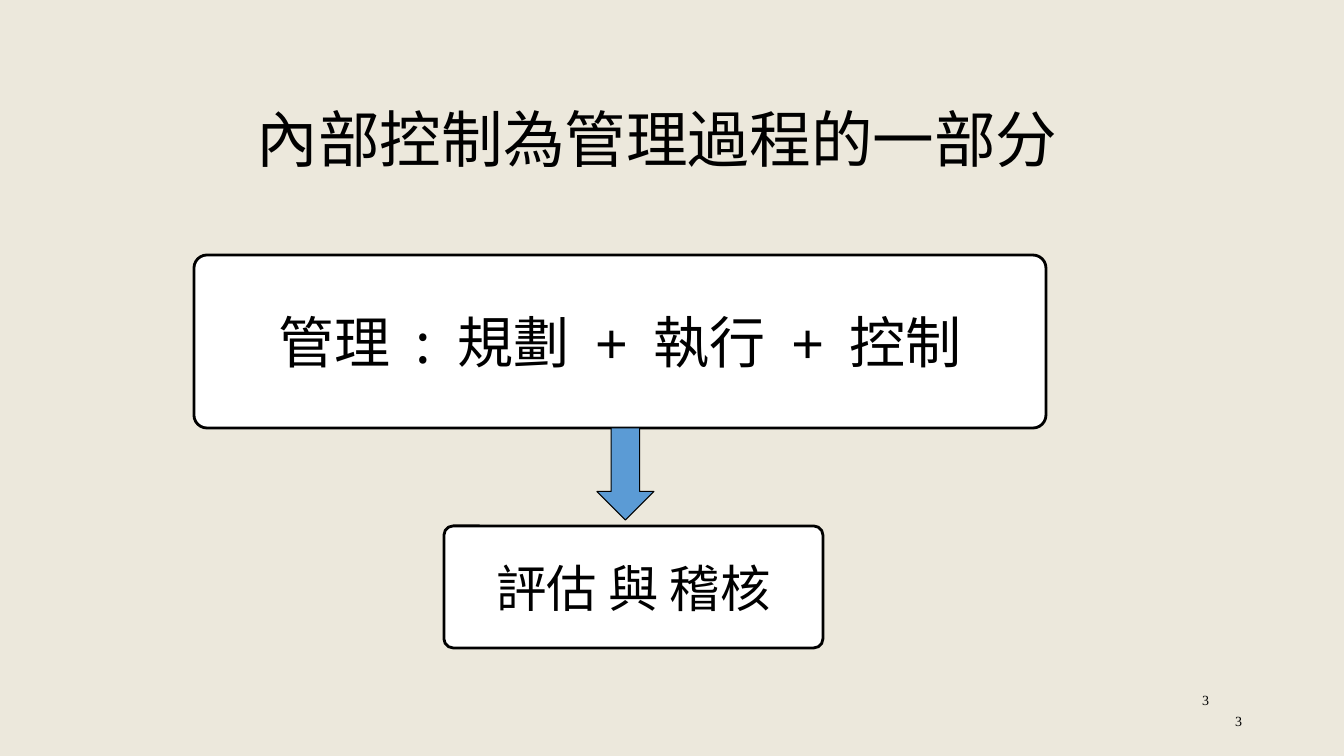
"""Build a slide on internal control as part of the management process."""
from lxml import etree
from pptx import Presentation
from pptx.dml.color import RGBColor
from pptx.enum.shapes import MSO_SHAPE
from pptx.enum.text import MSO_ANCHOR, PP_ALIGN
from pptx.oxml.ns import qn
from pptx.util import Emu, Pt

CENTER, RIGHT = PP_ALIGN.CENTER, PP_ALIGN.RIGHT
TOP, MIDDLE, BOTTOM = MSO_ANCHOR.TOP, MSO_ANCHOR.MIDDLE, MSO_ANCHOR.BOTTOM
ROUNDED, DOWN_ARROW = MSO_SHAPE.ROUNDED_RECTANGLE, MSO_SHAPE.DOWN_ARROW

COLORS = {"background": "ECE8DC", "box": "FFFFFF", "arrow": "5B9BD5", "ink": "000000"}
SERIF, SANS, CJK = "Times New Roman", "Arial", "Noto Sans CJK SC"
EMU_PER_PX = 914400 / 100.8
GAP_SPACING = 950

LABELS = [
    ((964, 687, 255, 50), "3", 10, RIGHT, TOP),
    ((153, 71, 1009, 109), "內部控制為管理過程的一部分", 44, CENTER, BOTTOM),
    ((950, 701, 302, 40), "3", 10, RIGHT, MIDDLE),
]
MANAGEMENT = ["管理", ":", "規劃", "+", "執行", "+", "控制"]
BOXES = [
    ((194, 255, 852, 173), MANAGEMENT, 40, GAP_SPACING),
    ((444, 526, 379, 122), ["評估", "與", "稽核"], 36, 0),
]
ARROW = (597, 428, 57, 92)


def color(name):
    return RGBColor.from_string(COLORS[name])


def emu(frame):
    return [Emu(round(length * EMU_PER_PX)) for length in frame]


def add_run(paragraph, text, size, font, spacing=0):
    run = paragraph.add_run()
    run.text = text
    run.font.size = Pt(size)
    run.font.name = font
    run.font.color.rgb = color("ink")
    properties = run._r.get_or_add_rPr()
    etree.SubElement(properties, qn("a:ea")).set("typeface", CJK)
    if spacing:
        properties.set("spc", str(spacing))


def prepare_text(shape, alignment, anchor):
    frame = shape.text_frame
    frame.word_wrap = True
    frame.vertical_anchor = anchor
    paragraph = frame.paragraphs[0]
    paragraph.alignment = alignment
    return paragraph


def add_label(slide, frame, text, size, alignment, anchor):
    shape = slide.shapes.add_textbox(*emu(frame))
    add_run(prepare_text(shape, alignment, anchor), text, size, SERIF)


def add_figure(slide, kind, frame, fill, line_width):
    shape = slide.shapes.add_shape(kind, *emu(frame))
    shape.shadow.inherit = False
    shape.fill.solid()
    shape.fill.fore_color.rgb = color(fill)
    shape.line.color.rgb = color("ink")
    shape.line.width = Pt(line_width)
    return shape


def add_box(slide, frame, words, size, spacing):
    shape = add_figure(slide, ROUNDED, frame, "box", 2)
    shape.adjustments[0] = 0.075
    paragraph = prepare_text(shape, CENTER, MIDDLE)
    for index, word in enumerate(words):
        if index:
            add_run(paragraph, " ", size, CJK, spacing)
        add_run(paragraph, word, size, SANS if word == "+" else CJK)


def main():
    presentation = Presentation()
    presentation.slide_width, presentation.slide_height = emu((1344, 756))
    slide = presentation.slides.add_slide(presentation.slide_layouts[6])
    slide.background.fill.solid()
    slide.background.fill.fore_color.rgb = color("background")
    for label in LABELS:
        add_label(slide, *label)
    for box in BOXES:
        add_box(slide, *box)
    add_figure(slide, DOWN_ARROW, ARROW, "arrow", 0.75)
    presentation.save("out.pptx")


if __name__ == "__main__":
    main()
